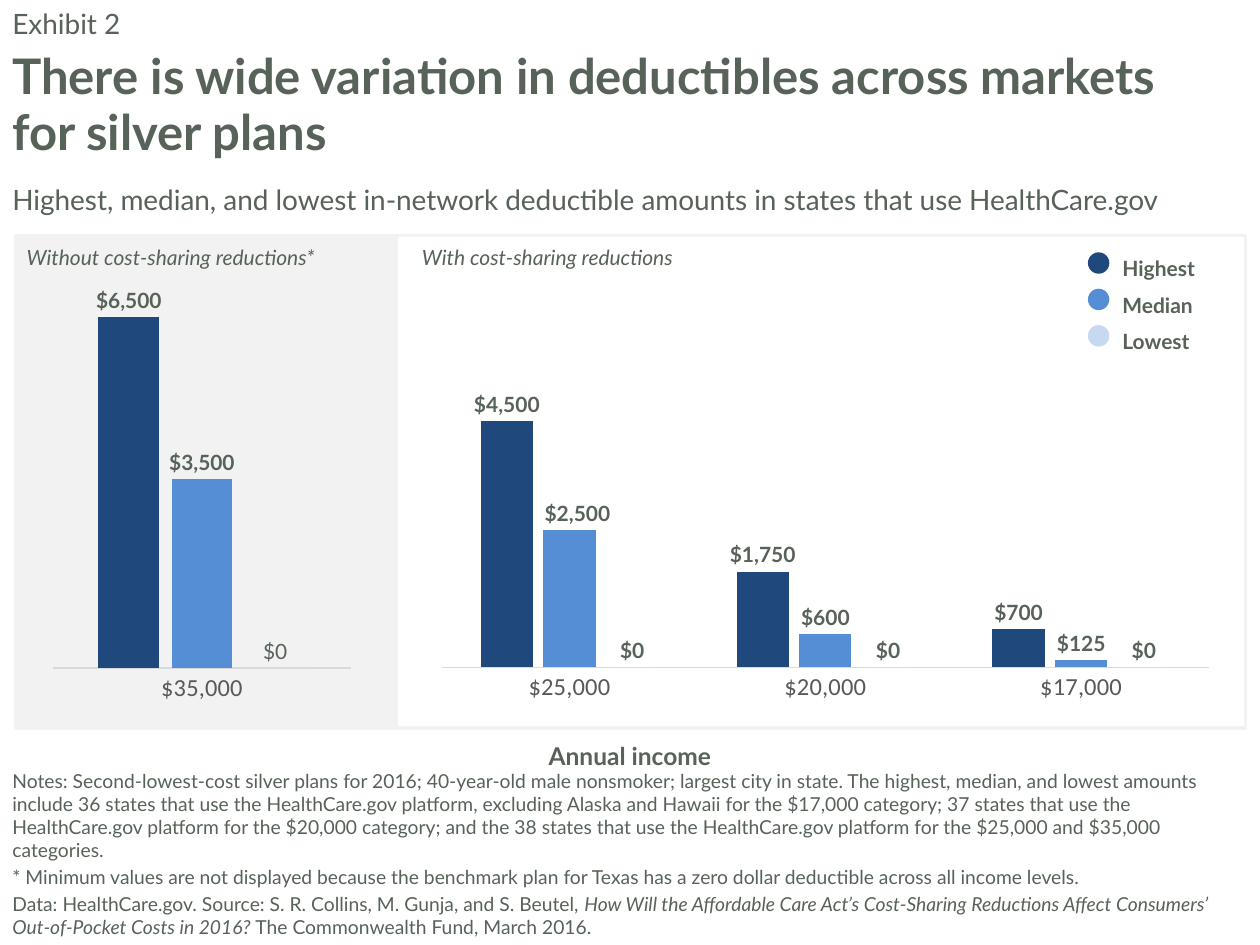
"""Build the slide on silver plan deductibles by annual income."""
from lxml import etree
from pptx import Presentation
from pptx import util as u
from pptx.chart.data import CategoryChartData
from pptx.dml.color import RGBColor
from pptx.enum import chart as ch
from pptx.enum import shapes, text

INK = RGBColor(0x57, 0x62, 0x58)
PALE = RGBColor(0xF2, 0xF2, 0xF2)
RUST = RGBColor(0xAA, 0x36, 0x07)
NAVY = RGBColor(0x1F, 0x49, 0x7D)
BLUE = RGBColor(0x55, 0x8E, 0xD5)
SKY = RGBColor(0xC6, 0xD9, 0xF1)
ICE = RGBColor(0xE6, 0xF5, 0xFC)
GREY = RGBColor(0x59, 0x59, 0x59)
RULE = RGBColor(0xD9, 0xD9, 0xD9)
BLACK = RGBColor(0, 0, 0)
NS = "http://schemas.openxmlformats.org/drawingml/2006/chart"


class Page:
    """Hold the style and the current slide."""
    face = "Lato"
    money = '"$"#,##0'

    def __init__(self, slide):
        self.slide = slide

    def frame(self, box):
        return [u.Pt(side) for side in box]

    def style(self, font, size, bold=False, slant=False, tint=INK, face=None):
        font.name = face or self.face
        font.size = u.Pt(size)
        font.bold = bold
        font.italic = slant
        font.color.rgb = tint

    def words(self, box, paras, size, bold=False, slant=False, lead=None,
              gap=0, align=text.PP_ALIGN.LEFT, hold=text.MSO_ANCHOR.TOP):
        body = self.slide.shapes.add_textbox(*self.frame(box)).text_frame
        body.word_wrap = True
        body.vertical_anchor = hold
        for i, runs in enumerate(paras):
            para = body.paragraphs[0] if i == 0 else body.add_paragraph()
            para.alignment = align
            if lead:
                para.line_spacing = lead
            if i:
                para.space_before = u.Pt(gap)
            for part, tilt in runs:
                for j, line in enumerate(part.split("\n")):
                    if j:
                        para.add_line_break()
                    run = para.add_run()
                    run.text = line
                    self.style(run.font, size, bold, tilt or slant)

    def line(self, box, phrase, size, **look):
        self.words(box, [[(phrase, False)]], size, **look)

    def shape(self, kind, box, fill=None, edge=None):
        item = self.slide.shapes.add_shape(kind, *self.frame(box))
        item.shadow.inherit = False
        if fill is None:
            item.fill.background()
        else:
            item.fill.solid()
            item.fill.fore_color.rgb = fill
        if edge is None:
            item.line.fill.background()
        else:
            item.line.color.rgb = edge
            item.line.width = u.Pt(2)

    def place(self, owner, spot, pairs):
        for old in owner.findall(f"{{{NS}}}layout"):
            owner.remove(old)
        layout = etree.Element(f"{{{NS}}}layout")
        hand = etree.SubElement(layout, f"{{{NS}}}manualLayout")
        for tag, val in pairs:
            etree.SubElement(hand, f"{{{NS}}}{tag}").set("val", str(val))
        owner.insert(spot, layout)

    def nudge(self, point, shift):
        tag = point.data_label
        self.style(tag.font, 12, True)
        tag.position = ch.XL_LABEL_POSITION.OUTSIDE_END
        mark = tag._dLbl
        self.place(mark, 1, [("x", shift), ("y", 0)])

    def bars(self, box, cats, rows, top, area, heavy):
        data = CategoryChartData(number_format=self.money)
        data.categories = cats
        data.categories.number_format = self.money
        for i, vals in enumerate([()] + rows, 1):
            data.add_series(f"Series {i}", vals)
        chart = self.slide.shapes.add_chart(
            ch.XL_CHART_TYPE.COLUMN_CLUSTERED, *self.frame(box), data).chart
        chart.has_title = False
        chart.has_legend = False
        self.style(chart.font, 10, tint=BLACK, face="Calibri")
        scale = chart.value_axis
        scale.minimum_scale = 0
        scale.maximum_scale = top
        scale.has_major_gridlines = False
        scale.visible = False
        base = chart.category_axis
        base.major_tick_mark = ch.XL_TICK_MARK.NONE
        base.format.line.color.rgb = RULE
        base.format.line.width = u.Pt(0.75)
        base.tick_labels.number_format = self.money
        base.tick_labels.number_format_is_linked = False
        self.style(base.tick_labels.font, 14, tint=GREY, face="Calibri")
        plot = chart.plots[0]
        plot.vary_by_categories = False
        plot.gap_width = 150
        plot.overlap = -20
        for row, tint, bold in zip(plot.series, (RUST, NAVY, BLUE, ICE), heavy):
            row.format.fill.solid()
            row.format.fill.fore_color.rgb = tint
            tags = row.data_labels
            tags.show_value = True
            tags.number_format = self.money
            tags.number_format_is_linked = False
            tags.position = ch.XL_LABEL_POSITION.OUTSIDE_END
            self.style(tags.font, 12, bold)
        blank = plot.series[0]._element
        blank.remove(blank.find(f"{{{NS}}}val"))
        modes = [("layoutTarget", "inner"), ("xMode", "edge"), ("yMode", "edge")]
        self.place(plot._element.getparent(), 0, modes + list(zip("xywh", area)))
        return plot


def main():
    deck = Presentation()
    deck.slide_width, deck.slide_height = u.Pt(720), u.Pt(540)
    page = Page(deck.slides.add_slide(deck.slide_layouts[6]))
    rect, disc = shapes.MSO_SHAPE.RECTANGLE, shapes.MSO_SHAPE.OVAL

    page.line((0, 23.6, 720, 72),
              "There is wide variation in deductibles across markets \nfor silver plans",
              28, bold=True, lead=u.Pt(32), hold=text.MSO_ANCHOR.MIDDLE)
    page.line((0, 0, 720, 24), "Exhibit 2", 16)
    notes = [
        [("Notes: Second-lowest-cost silver plans for 2016; 40-year-old male nonsmoker; "
          "largest city in state. The highest, median, and lowest amounts include 36 states "
          "that use the HealthCare.gov platform, excluding Alaska and Hawaii for the $17,000 "
          "category; 37 states that use the HealthCare.gov platform for the $20,000 category; "
          "and the 38 states that use the HealthCare.gov platform for the $25,000 and $35,000 "
          "categories.", False)],
        [("* Minimum values are not displayed because the benchmark plan for Texas has a zero "
          "dollar deductible across all income levels.", False)],
        [("Data: HealthCare.gov. Source: S. R. Collins, M. Gunja, and S. Beutel, ", False),
         ("How Will the Affordable Care Act’s Cost-Sharing Reductions Affect Consumers’ \n"
          "Out-of-Pocket Costs in 2016?", True),
         (" The Commonwealth Fund, March 2016.", False)],
    ]
    page.words((0, 492, 720, 48), notes, 11, gap=2.2, hold=text.MSO_ANCHOR.BOTTOM)
    page.line((0, 100.8, 720, 26.6),
              "Highest, median, and lowest in-network deductible amounts in states "
              "that use HealthCare.gov", 16)

    page.shape(rect, (9, 134.64, 217.2, 281.52), PALE, PALE)
    page.line((8.1, 136, 201.6, 21.8), "Without cost-sharing reductions*", 12, slant=True)
    page.line((234, 136, 201.6, 21.8), "With cost-sharing reductions", 12, slant=True)
    page.shape(rect, (225.7, 134.64, 486, 281.52), edge=PALE)

    plot = page.bars((244.2, 156.4, 455, 259.2), [25000.0, 20000.0, 17000.0],
                     [(4500, 1750, 700), (2500, 600, 125), (0, 0, 0)], 5000,
                     (0.018, 0.265, 0.964, 0.603), (True, True, True, True))
    page.nudge(plot.series[2].points[0], 0.01)
    page.bars((29.8, 148.7, 171.36, 268.56), [35000.0],
              [(6500,), (3500,), (0,)], 7000,
              (0, 0.064, 1, 0.804), (True, True, True, False))

    page.line((0, 419.76, 720, 24.48), "Annual income", 14, bold=True,
              align=text.PP_ALIGN.CENTER)
    for i, (name, tint) in enumerate([("Highest", NAVY), ("Median", BLUE), ("Lowest", SKY)]):
        drop = 20.8 * i
        page.line((634.32, 135.36 + drop, 122.4, 28.8), name, 12, bold=True, lead=1.5)
        page.shape(disc, (621.7, 144.2 + drop, 12.24, 12.24), tint)
    deck.save("out.pptx")


if __name__ == "__main__":
    main()
